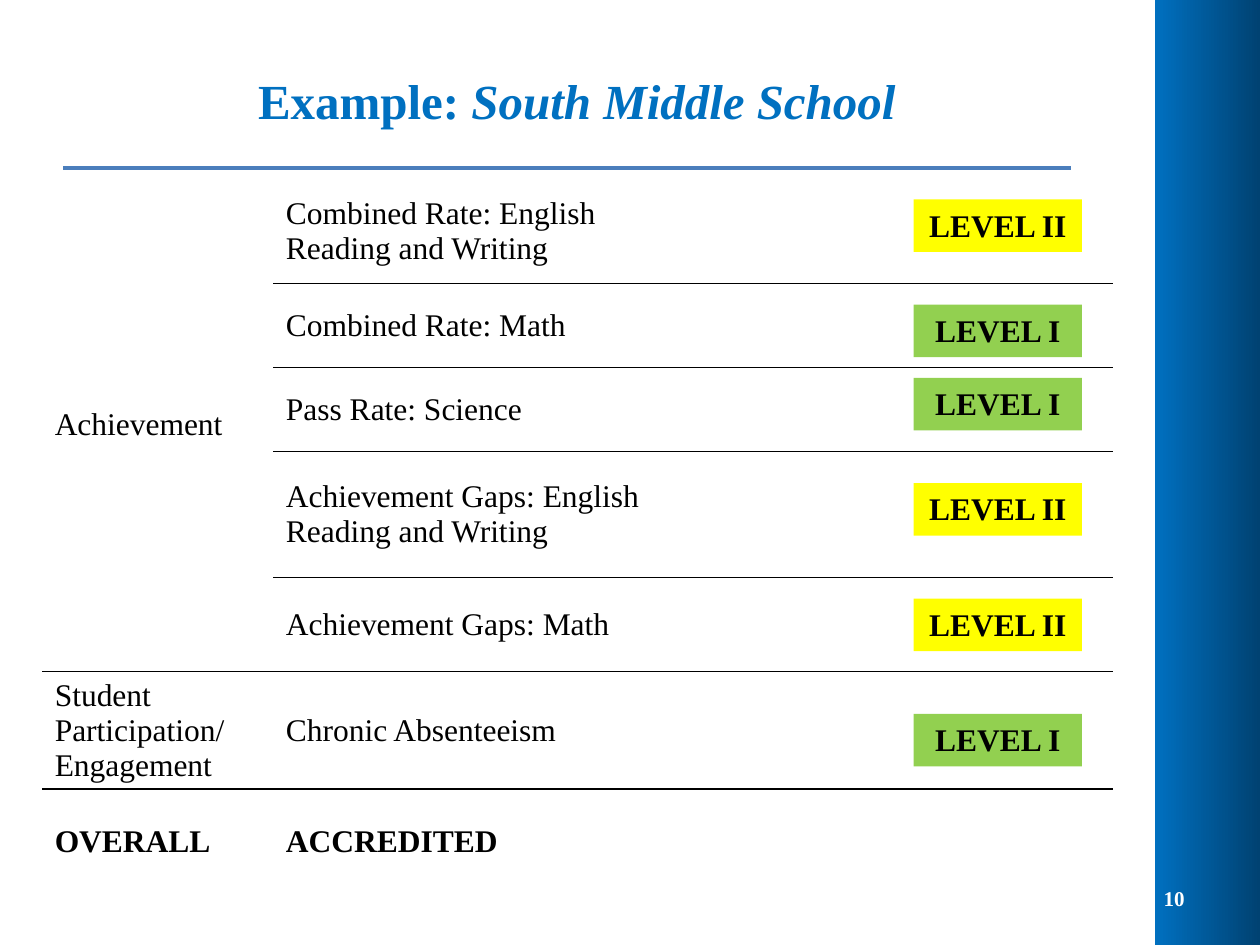
import pptx
import pptx.dml.color
import pptx.enum.shapes
import pptx.enum.text
import pptx.oxml.ns
import pptx.util
from lxml import etree

Cm, Pt = pptx.util.Cm, pptx.util.Pt
ALIGN, ANCHOR = pptx.enum.text.PP_ALIGN, pptx.enum.text.MSO_ANCHOR
RECTANGLE = pptx.enum.shapes.MSO_SHAPE.RECTANGLE
NO_STYLE_NO_GRID = "{2D5ABB26-0587-4C30-8999-92F81FD0307C}"

BLUE, GREEN, YELLOW = "0070C0", "92D050", "FFFF00"
COLUMN_WIDTHS = [4.66, 12.06, 4.87]
# area, measure, row height, width of the rule below (0 for none)
ROWS = [
    ("Achievement", "Combined Rate: English\nReading and Writing", 2.12, 0.5),
    ("", "Combined Rate: Math", 1.69, 0.5),
    ("", "Pass Rate: Science", 1.69, 0.5),
    ("", "Achievement Gaps: English\nReading and Writing", 2.54, 0.5),
    ("", "Achievement Gaps: Math", 1.9, 1),
    ("Student Participation/ Engagement", "Chronic Absenteeism", 2.37, 1),
    ("OVERALL", "ACCREDITED", 2.13, 0),
]
LEVELS = [
    (4.02, "LEVEL II", YELLOW),
    (6.14, "LEVEL I", GREEN),
    (7.62, "LEVEL I", GREEN),
    (9.74, "LEVEL II", YELLOW),
    (12.07, "LEVEL II", YELLOW),
    (14.39, "LEVEL I", GREEN),
]


def rgb(value):
    return pptx.dml.color.RGBColor.from_string(value)


def write(tf, text, size=18, color="000000", bold=False, italic=False, align=None):
    """Append text to the last paragraph; each newline starts another one."""
    for i, line in enumerate(text.split("\n")):
        p = tf.add_paragraph() if i else tf.paragraphs[-1]
        p.alignment = align
        r = p.add_run()
        r.text = line
        r.font.name = "Times New Roman"
        r.font.size = Pt(size)
        r.font.bold = bold
        r.font.italic = italic
        r.font.color.rgb = rgb(color)


def add_border(cell, side, width):
    tag = pptx.oxml.ns.qn
    ln = etree.SubElement(cell._tc.get_or_add_tcPr(), tag("a:" + side), w=str(Pt(width)))
    fill = etree.SubElement(ln, tag("a:solidFill"))
    etree.SubElement(fill, tag("a:srgbClr"), val="000000")


class SlideBuilder:
    def __init__(self, prs):
        self.s = prs.slides.add_slide(prs.slide_layouts[5])

    def rectangle(self, left, top, width, height):
        sp = self.s.shapes.add_shape(RECTANGLE, Cm(left), Cm(top), Cm(width), Cm(height))
        sp.shadow.inherit = False
        sp.line.fill.background()
        return sp

    def side_band(self):
        sp = self.rectangle(23.28, 0, 2.12, 19.05)
        sp.fill.gradient()
        sp.fill.gradient_angle = 0
        for stop, color in zip(sp.fill.gradient_stops, (BLUE, "004272")):
            stop.color.rgb = rgb(color)

    def title(self, lead, name):
        sp = self.s.shapes.title
        sp.left, sp.top, sp.width, sp.height = Cm(1.27), Cm(0.43), Cm(20.96), Cm(3.18)
        tf = sp.text_frame
        tf.vertical_anchor = ANCHOR.MIDDLE
        write(tf, lead, 28, BLUE, bold=True, align=ALIGN.CENTER)
        write(tf, name, 28, BLUE, bold=True, italic=True, align=ALIGN.CENTER)

    def rule(self, x1, x2, y):
        line = self.s.shapes.add_connector(
            pptx.enum.shapes.MSO_CONNECTOR.STRAIGHT, Cm(x1), Cm(y), Cm(x2), Cm(y))
        line.line.color.rgb = rgb("4B7EBC")
        line.line.width = Pt(2)
        etree.SubElement(line._element.spPr, pptx.oxml.ns.qn("a:effectLst"))

    def ratings_table(self, left, top):
        frame = self.s.shapes.add_table(
            len(ROWS), len(COLUMN_WIDTHS), Cm(left), Cm(top),
            Cm(sum(COLUMN_WIDTHS)), Cm(sum(row[2] for row in ROWS)))
        table = frame.table
        table.first_row = table.horz_banding = False
        table._tbl.tblPr.find(pptx.oxml.ns.qn("a:tableStyleId")).text = NO_STYLE_NO_GRID
        for column, width in zip(table.columns, COLUMN_WIDTHS):
            column.width = Cm(width)
        for i, (area, measure, height, border) in enumerate(ROWS):
            table.rows[i].height = Cm(height)
            for j, text in enumerate((area, measure, "")):
                cell = table.cell(i, j)
                cell.vertical_anchor = ANCHOR.MIDDLE
                if border and (j > 0 or i >= 4):
                    add_border(cell, "lnB", border)
                    add_border(table.cell(i + 1, j), "lnT", border)
                cell.fill.background()
                if text:
                    write(cell.text_frame, text, bold=i == len(ROWS) - 1)
        table.cell(0, 0).merge(table.cell(4, 0))

    def level(self, top, text, color):
        sp = self.rectangle(18.42, top, 3.39, 1.06)
        sp.fill.solid()
        sp.fill.fore_color.rgb = rgb(color)
        tf = sp.text_frame
        tf.word_wrap = False
        tf.vertical_anchor = ANCHOR.TOP
        write(tf, text, bold=True, align=ALIGN.CENTER)

    def page_number(self, number):
        sp = self.s.shapes.add_textbox(Cm(23.06), Cm(17.6), Cm(1.07), Cm(1.02))
        tf = sp.text_frame
        tf.word_wrap = True
        tf.vertical_anchor = ANCHOR.MIDDLE
        write(tf, number, 12, "FFFFFF", bold=True, align=ALIGN.RIGHT)


def main():
    prs = pptx.Presentation()
    prs.slide_width, prs.slide_height = Cm(25.4), Cm(19.05)
    slide = SlideBuilder(prs)
    slide.side_band()
    slide.title("Example: ", "South Middle School ")
    slide.ratings_table(0.85, 3.6)
    for level in LEVELS:
        slide.level(*level)
    slide.page_number("10")
    slide.rule(1.27, 21.59, 3.39)
    prs.save("out.pptx")


if __name__ == "__main__":
    main()
